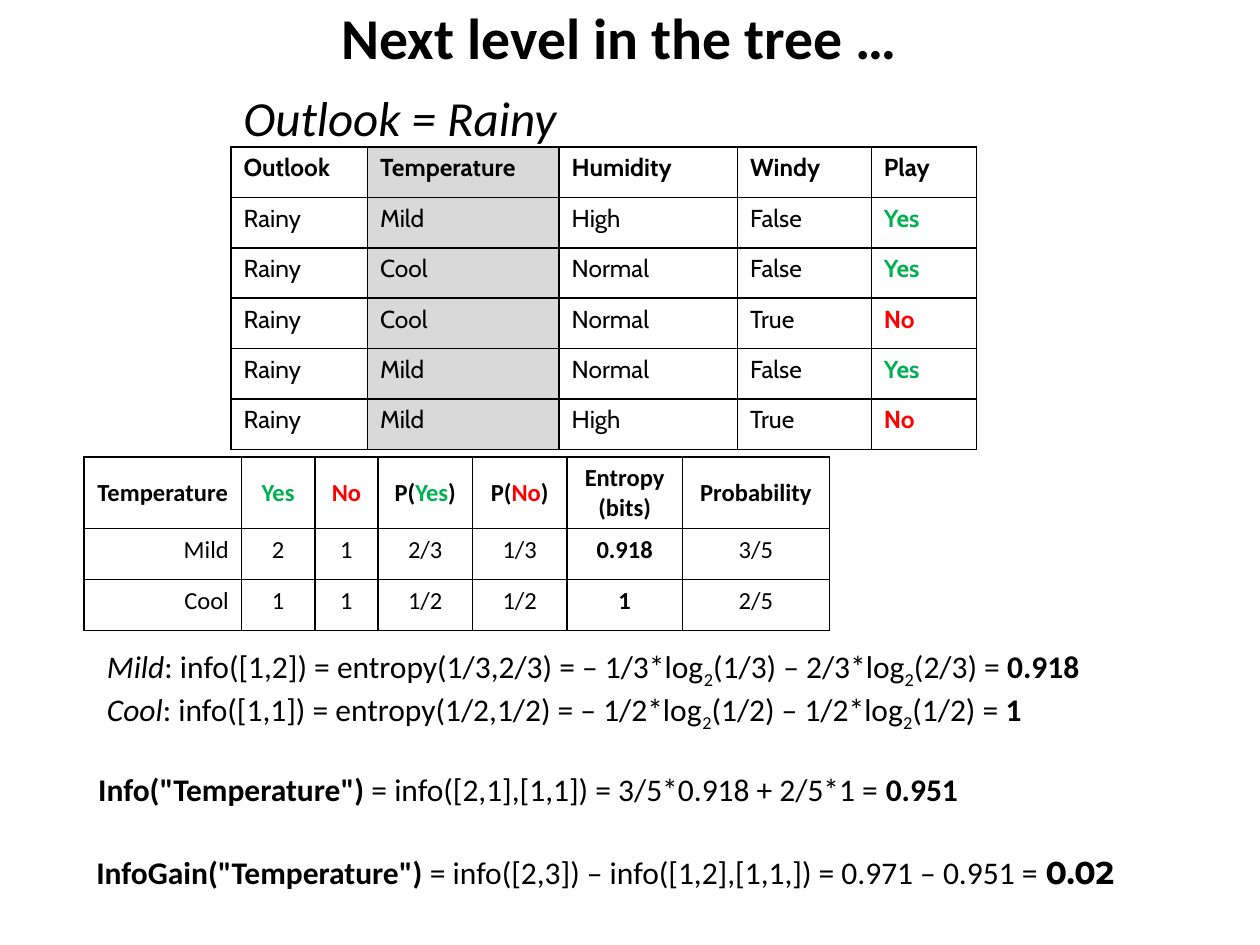
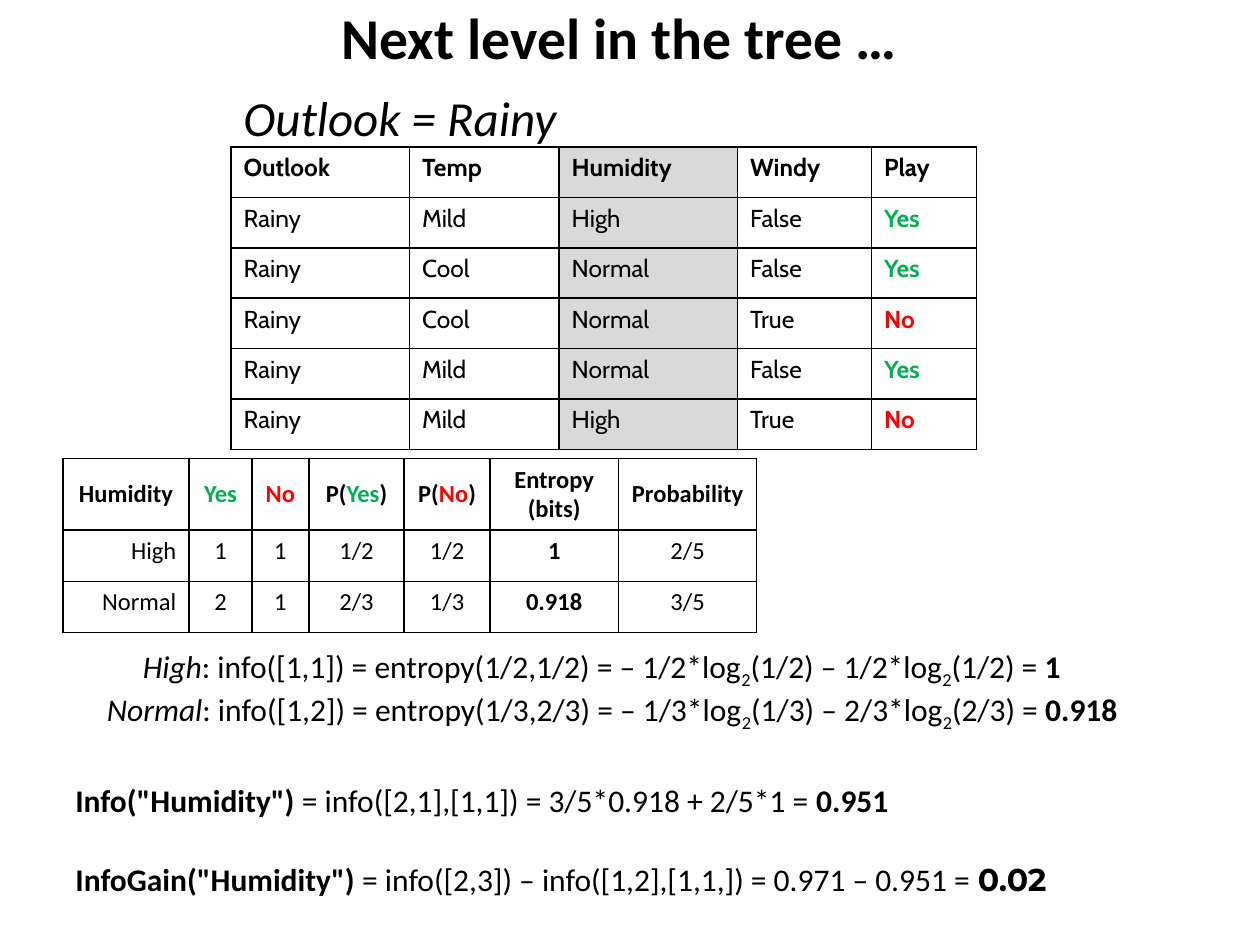
"""Build two slides that work out the information gain of the next tree split."""
import pptx
import pptx.dml.color
import pptx.enum.text
import pptx.oxml
import pptx.oxml.ns
import pptx.util

Pt = pptx.util.Pt
ALIGN = pptx.enum.text.PP_ALIGN
ANCHOR = pptx.enum.text.MSO_ANCHOR

COLORS = {"text": "000000", "Yes": "00B050", "No": "FF0000", "shade": "D9D9D9"}
BODY_FONT, TABLE_FONT, RESULT_FONT = "Calibri", "Cabin", "Montserrat"

RAINY_DAYS = [
    ("Rainy", "Mild", "High", "False", "Yes"),
    ("Rainy", "Cool", "Normal", "False", "Yes"),
    ("Rainy", "Cool", "Normal", "True", "No"),
    ("Rainy", "Mild", "Normal", "False", "Yes"),
    ("Rainy", "Mild", "High", "True", "No"),
]

# Each value is (name, yes count, no count, entropy); positions are (left, top, width).
SPLITS = [
    {
        "attribute": "Temperature",
        "header": ("Outlook", "Temperature", "Humidity", "Windy", "Play"),
        "day_widths": (78, 109.5, 102, 76.5, 60),
        "values": [("Mild", 2, 1, "0.918"), ("Cool", 1, 1, "1")],
        "summary_at": (48, 261),
        "summary_widths": (90, 42, 36, 54, 54, 66, 84),
        "entropy_at": (54, 366, 590),
        "first_indent": 0,
        "info_at": (49, 436.5, 511),
        "gain_at": (48, 484, 609),
    },
    {
        "attribute": "Humidity",
        "header": ("Outlook", "Temp", "Humidity", "Windy", "Play"),
        "day_widths": (102, 85.5, 102, 76.5, 60),
        "values": [("High", 1, 1, "1"), ("Normal", 2, 1, "0.918")],
        "summary_at": (36, 262),
        "summary_widths": (72, 36, 32.5, 54.5, 49, 73.5, 79),
        "entropy_at": (54, 366, 613),
        "first_indent": 20.5,
        "info_at": (36, 443, 484),
        "gain_at": (36, 488, 582.5),
    },
]


def rgb(name):
    """Return the palette colour with this name."""
    return pptx.dml.color.RGBColor.from_string(COLORS[name])


def write_paragraph(paragraph, runs, size, font=BODY_FONT, align=ALIGN.LEFT, bold=None, italic=None):
    """Write (text, style) runs over the paragraph's common font."""
    paragraph.alignment = align
    paragraph.font.size, paragraph.font.name = Pt(size), font
    paragraph.font.bold, paragraph.font.italic = bold, italic
    paragraph.font.color.rgb = rgb("text")
    for text, style in runs:
        for number, line in enumerate(text.split("\n")):
            if number:
                paragraph.add_line_break()
            run = paragraph.add_run()
            run.text = line
            if text in ("Yes", "No"):
                run.font.color.rgb = rgb(text)
            for key in ("bold", "italic", "name"):
                if key in style:
                    setattr(run.font, key, style[key])
            if "baseline" in style:
                run._r.get_or_add_rPr().set("baseline", str(style["baseline"]))


def add_text(slide, left, top, width, height, wrap=False, anchor=ANCHOR.TOP):
    """Add a text box and return its text frame."""
    frame = slide.shapes.add_textbox(Pt(left), Pt(top), Pt(width), Pt(height)).text_frame
    frame.word_wrap, frame.vertical_anchor = wrap, anchor
    return frame


def add_heading(slide, text, box, size, **style):
    """Add a one-line heading centred vertically in its box."""
    frame = add_text(slide, *box, wrap=True, anchor=ANCHOR.MIDDLE)
    write_paragraph(frame.paragraphs[0], [(text, {})], size, **style)


def add_line(slide, position, runs):
    """Add one line of calculation."""
    frame = add_text(slide, *position, 29)
    write_paragraph(frame.paragraphs[0], runs, 18)


def add_border(cell):
    """Draw a thin line on all four sides of a cell."""
    properties = cell._tc.get_or_add_tcPr()
    for side in "LRTB":
        properties.append(pptx.oxml.parse_xml(
            f'<a:ln{side} {pptx.oxml.ns.nsdecls("a")} w="12700"><a:solidFill>'
            f'<a:srgbClr val="{COLORS["text"]}"/></a:solidFill></a:ln{side}>'))


def add_grid(slide, left, top, widths, heights):
    """Add a bordered table without fill and return it."""
    frame = slide.shapes.add_table(len(heights), len(widths), Pt(left), Pt(top),
                                   Pt(sum(widths)), Pt(sum(heights)))
    table = frame.table
    table.first_row = table.horz_banding = False
    for column, width in zip(table.columns, widths):
        column.width = Pt(width)
    for row, height in zip(table.rows, heights):
        row.height = Pt(height)
    for cell in table.iter_cells():
        add_border(cell)
        cell.fill.background()
    return table


def add_days_table(slide, split):
    """Add the rainy days with the split attribute's column shaded."""
    rows = [split["header"], *RAINY_DAYS]
    table = add_grid(slide, 132, 84, split["day_widths"], [28.8] * len(rows))
    shaded = split["header"].index(split["attribute"])
    for row, texts in enumerate(rows):
        for column, text in enumerate(texts):
            cell = table.cell(row, column)
            if column == shaded:
                cell.fill.solid()
                cell.fill.fore_color.rgb = rgb("shade")
            write_paragraph(cell.text_frame.paragraphs[0], [(text, {})], 14, TABLE_FONT,
                            bold=row == 0 or text in ("Yes", "No"))


def add_summary_table(slide, split):
    """Add the counts, chances and entropy of each value of the attribute."""
    rows = [[(split["attribute"],), ("Yes",), ("No",), ("P(", "Yes", ")"), ("P(", "No", ")"),
             ("Entropy\n(bits)",), ("Probability",)]]
    for name, yes, no, entropy in split["values"]:
        total = yes + no
        texts = (name, yes, no, f"{yes}/{total}", f"{no}/{total}", entropy,
                 f"{total}/{len(RAINY_DAYS)}")
        rows.append([(str(text),) for text in texts])
    table = add_grid(slide, *split["summary_at"], split["summary_widths"], (41, 29.2, 29.2))
    entropy_column = 5
    for row, cells in enumerate(rows):
        for column, parts in enumerate(cells):
            cell = table.cell(row, column)
            cell.vertical_anchor = ANCHOR.TOP if row else ANCHOR.MIDDLE
            write_paragraph(cell.text_frame.paragraphs[0], [(part, {}) for part in parts], 14,
                            align=ALIGN.RIGHT if row and column == 0 else ALIGN.CENTER,
                            bold=row == 0 or column == entropy_column)


def entropy_runs(name, yes, no, entropy):
    """Return the runs that spell out one value's entropy."""
    total = yes + no
    first, second = f"{no}/{total}", f"{yes}/{total}"
    base = ("2", {"baseline": -25000})
    return [
        (name, {"italic": True}),
        (f": info([{no},{yes}]) = entropy({first},{second}) = – {first}*log", {}), base,
        (f"({first}) – {second}*log", {}), base,
        (f"({second}) = ", {}), (entropy, {"bold": True}),
    ]


def add_entropy_lines(slide, split):
    """Add one entropy calculation for each value of the attribute."""
    frame = add_text(slide, *split["entropy_at"], 51)
    first, second = frame.paragraphs[0], frame.add_paragraph()
    for paragraph, value in zip((first, second), split["values"]):
        write_paragraph(paragraph, entropy_runs(*value), 18)
    if split["first_indent"]:
        first._p.get_or_add_pPr().set("marL", str(Pt(split["first_indent"])))


def add_split_slide(presentation, split):
    """Add the slide that weighs one attribute."""
    slide = presentation.slides.add_slide(presentation.slide_layouts[6])
    attribute = split["attribute"]
    add_heading(slide, "Next level in the tree …", (30, 0, 648, 42), 33,
                align=ALIGN.CENTER, bold=True)
    add_heading(slide, "Outlook = Rainy", (132, 52, 241, 30), 28, italic=True)
    add_days_table(slide, split)
    add_summary_table(slide, split)
    add_entropy_lines(slide, split)
    add_line(slide, split["info_at"], [
        (f'Info("{attribute}")', {"bold": True}),
        (" = info([2,1],[1,1]) = 3/5*0.918 + 2/5*1 = ", {}), ("0.951", {"bold": True})])
    add_line(slide, split["gain_at"], [
        (f'InfoGain("{attribute}")', {"bold": True}),
        (" = info([2,3]) – info([1,2],[1,1,]) = 0.971 – 0.951 = ", {}),
        ("0.02", {"bold": True, "name": RESULT_FONT})])


def main():
    """Build and save the presentation."""
    presentation = pptx.Presentation()
    presentation.slide_width, presentation.slide_height = Pt(720), Pt(540)
    for split in SPLITS:
        add_split_slide(presentation, split)
    presentation.save("out.pptx")


if __name__ == "__main__":
    main()
